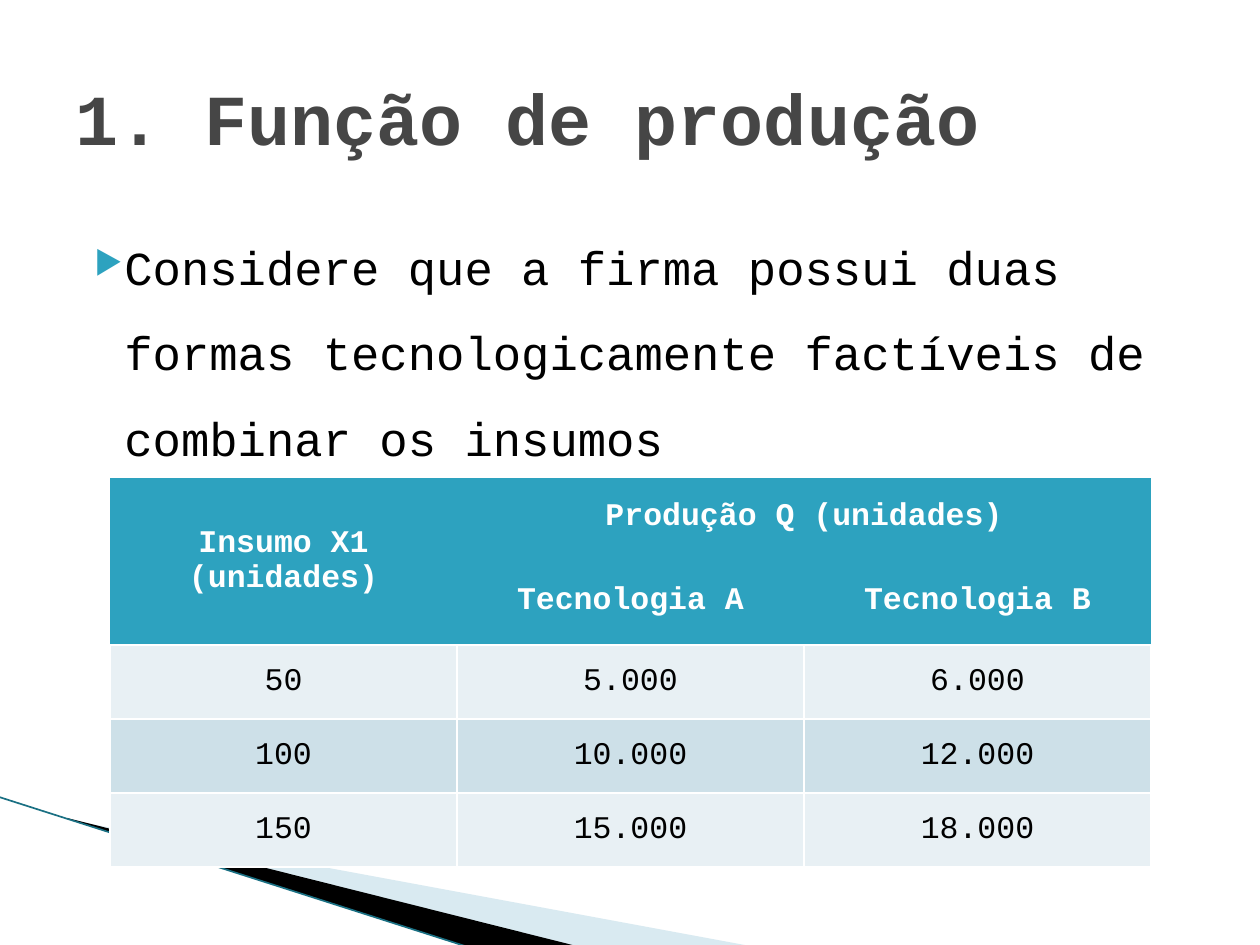
import pptx
import pptx.util
import pptx.dml.color
import pptx.enum.shapes
import pptx.enum.text
import pptx.oxml.ns
from lxml import etree

# Content
TITLE = "1. Função de produção"
BODY = "Considere que a firma possui duas formas tecnologicamente factíveis de combinar os insumos"
ROWS = [
    ["Insumo X1\n(unidades)", "Produção Q (unidades)", ""],
    ["", "Tecnologia A", "Tecnologia B"],
    ["50", "5.000", "6.000"],
    ["100", "10.000", "12.000"],
    ["150", "15.000", "18.000"],
]
HEADER_ROWS = 2
HEADER_HEIGHT, DATA_HEIGHT, COLUMN_WIDTH = 79, 74, 347
WEDGES = [
    ("A0CBDC", 40, [(69, 820), (750, 946), (575, 946), (69, 819)]),
    ("000000", 100, [(67, 818), (576, 946), (469, 947), (68, 819)]),
]
ACCENT, WHITE, BLACK = "2DA2BF", "FFFFFF", "000000"
BANDS = ["E8F0F4", "CDE0E8"]
FONT = "Courier New"
NO_STYLE = "{2D5ABB26-0587-4C30-8999-92F81FD0307C}"
EMU_PER_PX = 914400 / 126


def px(length):
    return pptx.util.Emu(round(length * EMU_PER_PX))


def color(value):
    return pptx.dml.color.RGBColor.from_string(value)


def add_xml(parent, tag, **attributes):
    return etree.SubElement(parent, pptx.oxml.ns.qn(tag), attributes)


def add_run(para, text, size, tint, bold=False):
    span = para.add_run()
    span.text = text
    span.font.name = FONT
    span.font.size = pptx.util.Pt(size)
    span.font.bold = bold
    span.font.color.rgb = color(tint)


def add_box(slide, left, top, width, height):
    frame = slide.shapes.add_textbox(px(left), px(top), px(width), px(height)).text_frame
    frame.word_wrap = True
    return frame


def add_wedge(slide, tint, opacity, points):
    builder = slide.shapes.build_freeform(*points[0], scale=EMU_PER_PX)
    builder.add_line_segments(points[1:], close=True)
    wedge = builder.convert_to_shape()
    wedge.shadow.inherit = False
    wedge.line.fill.background()
    wedge.fill.solid()
    wedge.fill.fore_color.rgb = color(tint)
    if opacity < 100:
        tone = wedge.fill._xPr.find(".//" + pptx.oxml.ns.qn("a:srgbClr"))
        add_xml(tone, "a:alpha", val=str(opacity * 1000))


def add_borders(cell):
    properties = cell._tc.get_or_add_tcPr()
    for side in ("L", "R", "T", "B"):
        border = add_xml(properties, "a:ln" + side, w="12700")
        add_xml(add_xml(border, "a:solidFill"), "a:srgbClr", val=WHITE)


def fill_cell(cell, text, row):
    header = row < HEADER_ROWS
    if not header:
        add_borders(cell)
    cell.fill.solid()
    cell.fill.fore_color.rgb = color(ACCENT if header else BANDS[(row - HEADER_ROWS) % 2])
    cell.vertical_anchor = pptx.enum.text.MSO_ANCHOR.MIDDLE
    if not text:
        return
    for index, line in enumerate(text.split("\n")):
        para = cell.text_frame.add_paragraph() if index else cell.text_frame.paragraphs[0]
        para.alignment = pptx.enum.text.PP_ALIGN.CENTER
        add_run(para, line, 18, WHITE if header else BLACK, header)


deck = pptx.Presentation()
deck.slide_width, deck.slide_height = px(1260), px(945)
slide = deck.slides.add_slide(deck.slide_layouts[6])

# Corner decoration
for wedge in WEDGES:
    add_wedge(slide, *wedge)
edge = slide.shapes.add_connector(
    pptx.enum.shapes.MSO_CONNECTOR.STRAIGHT, px(-1), px(797), px(468), px(947))
edge.line.color.rgb = color("1A7083")
edge.line.width = pptx.util.Pt(0.95)
add_xml(edge._element.spPr, "a:effectLst")

# Bulleted statement
para = add_box(slide, 63, 204, 1134, 624).paragraphs[0]
para.line_spacing = 1.5
properties = para._p.get_or_add_pPr()
properties.set("marL", str(px(49)))
properties.set("indent", str(px(-30)))
add_xml(add_xml(properties, "a:buClr"), "a:srgbClr", val=ACCENT)
add_xml(properties, "a:buSzPct", val="68000")
add_xml(properties, "a:buChar", char="▶")
add_xml(add_xml(properties, "a:tabLst"), "a:tab", pos=str(px(49)), algn="l")
add_run(para, BODY, 27, BLACK)

# Title
frame = add_box(slide, 63, 38, 1134, 157)
frame.vertical_anchor = pptx.enum.text.MSO_ANCHOR.MIDDLE
add_run(frame.paragraphs[0], TITLE, 41, "464646", True)

# Production table
heights = [HEADER_HEIGHT if row < HEADER_ROWS else DATA_HEIGHT for row in range(len(ROWS))]
columns = len(ROWS[0])
table = slide.shapes.add_table(
    len(ROWS), columns, px(110), px(478), px(COLUMN_WIDTH * columns), px(sum(heights))).table
table.horz_banding = False
table._tbl.tblPr.find(pptx.oxml.ns.qn("a:tableStyleId")).text = NO_STYLE
for column in table.columns:
    column.width = px(COLUMN_WIDTH)
for row, texts in enumerate(ROWS):
    table.rows[row].height = px(heights[row])
    for column, text in enumerate(texts):
        fill_cell(table.cell(row, column), text, row)
table.cell(0, 0).merge(table.cell(1, 0))
table.cell(0, 1).merge(table.cell(0, 2))

deck.save("out.pptx")
